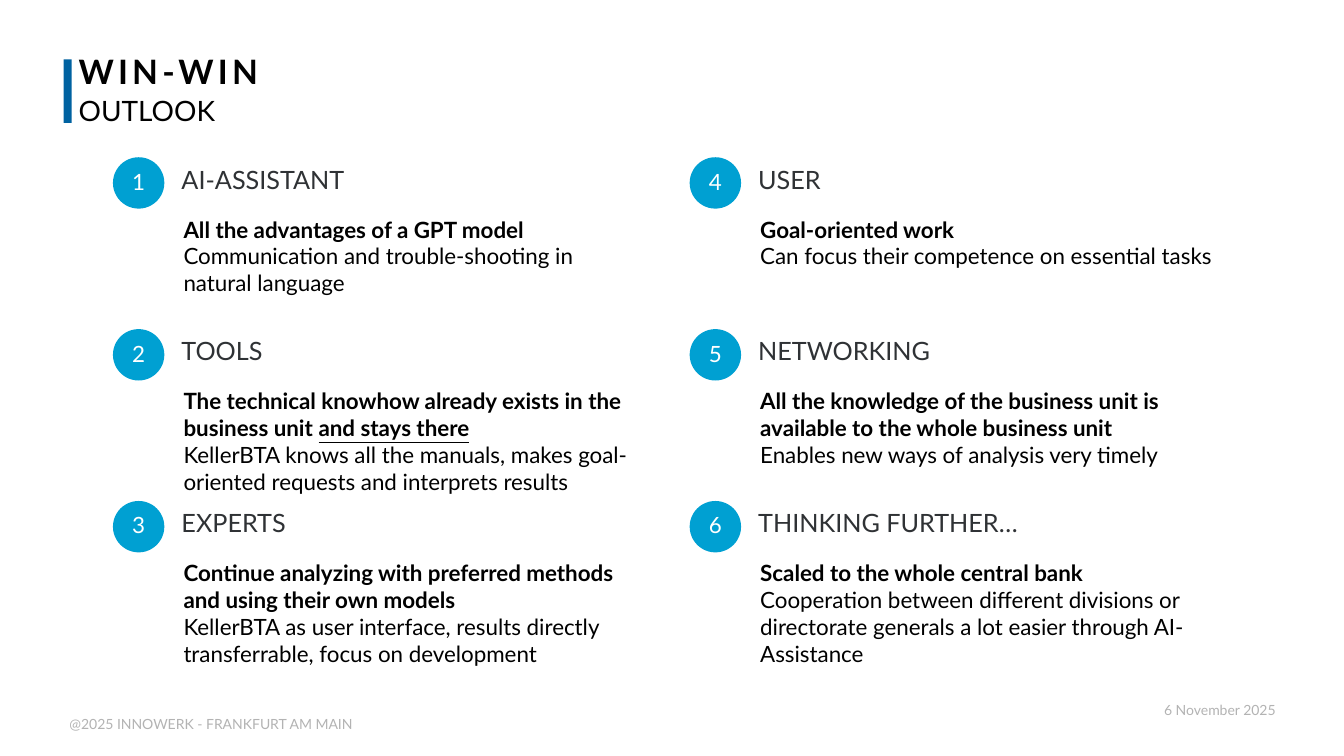
from pptx import Presentation
from pptx.util import Inches, Pt
from pptx.dml.color import RGBColor
from pptx.enum.shapes import MSO_SHAPE as Shape
from pptx.enum.text import PP_ALIGN as Align, MSO_ANCHOR as Anchor

BLACK, GREY, DARK, WHITE = "000000", "B3B3B3", "2F3235", "FFFFFF"
NAVY, CYAN = "0062A1", "00A0D2"

ITEMS = [
    ("AI-ASSISTANT", "All the advantages of a GPT model", "",
     "Communication and trouble-shooting in natural language"),
    ("TOOLS", "The technical knowhow already exists in the business unit ",
     "and stays there",
     "KellerBTA knows all the manuals, makes goal-oriented requests "
     "and interprets results"),
    ("EXPERTS", "Continue analyzing with preferred methods and using their own models", "",
     "KellerBTA as user interface, results directly transferrable, "
     "focus on development"),
    ("USER", "Goal-oriented work", "",
     "Can focus their competence on essential tasks"),
    ("NETWORKING",
     "All the knowledge of the business unit is available to the whole business unit", "",
     "Enables new ways of analysis very timely"),
    ("THINKING FURTHER…", "Scaled to the whole central bank", "",
     "Cooperation between different divisions or directorate generals "
     "a lot easier through AI-Assistance"),
]
ROWS = 3
LEFT, TOP = 1.12, 1.56
COL_STEP, ROW_STEP = 5.72, 1.705
DISC, WIDE = 0.51, 4.65
PAD = (0.03,) * 4


def color(code):
    return RGBColor.from_string(code)


def write(shape, paras, size, tint, pad=(0,) * 4, lead=1.0,
          align=Align.LEFT, anchor=Anchor.TOP):
    frame = shape.text_frame
    sides = zip(("left", "top", "right", "bottom"), pad)
    form = {"margin_" + side: Inches(gap) for side, gap in sides}
    form.update(word_wrap=True, vertical_anchor=anchor)
    for name, value in form.items():
        setattr(frame, name, value)
    for i, runs in enumerate(paras):
        para = frame.add_paragraph() if i else frame.paragraphs[0]
        para.alignment, para.line_spacing = align, lead
        for text, style in runs:
            run = para.add_run()
            run.text = text
            look = {"name": "Lato", "size": Pt(size), **style}
            for name, value in look.items():
                setattr(run.font, name, value)
            run.font.color.rgb = color(tint)


def label(box, paras, *args, **form):
    shape = slide.shapes.add_textbox(*map(Inches, box))
    write(shape, paras, *args, **form)
    return shape


def solid(kind, box, tint):
    shape = slide.shapes.add_shape(kind, *map(Inches, box))
    shape.shadow.inherit = False
    shape.fill.solid()
    shape.fill.fore_color.rgb = color(tint)
    shape.line.fill.background()
    return shape


deck = Presentation()
deck.slide_width, deck.slide_height = Inches(13.33), Inches(7.5)
slide = deck.slides.add_slide(deck.slide_layouts[6])

solid(Shape.RECTANGLE, (0.63, 0.59, 0.08, 0.63), NAVY)
title = label((0.78, 0.54, 11.96, 0.37), [[("WIN-WIN", {"bold": True})]],
              24, BLACK, lead=0.9, anchor=Anchor.BOTTOM)
title.text_frame.paragraphs[0].runs[0]._r.get_or_add_rPr().set("spc", "300")
label((0.78, 0.93, 11.96, 0.34), [[("OUTLOOK", {})]], 20, BLACK)
label((0.59, 7.1, 6.82, 0.18), [[("@2025 INNOWERK - FRANKFURT AM MAIN", {})]],
      10, GREY, pad=(0.1, 0, 0.1, 0))
label((9.66, 6.91, 3.09, 0.18), [[("6 November 2025", {})]],
      10, GREY, pad=(0.1, 0.05, 0.1, 0.05), align=Align.RIGHT)

for i, (head, claim, stress, note) in enumerate(ITEMS):
    col, row = divmod(i, ROWS)
    x, y = LEFT + col * COL_STEP, TOP + row * ROW_STEP
    disc = solid(Shape.OVAL, (x, y, DISC, DISC), CYAN)
    write(disc, [[(str(i + 1), {})]], 16, WHITE, lead=0.9,
          align=Align.CENTER, anchor=Anchor.MIDDLE)
    label((x + 0.65, y + 0.07, WIDE, 0.33), [[(head, {})]], 18, DARK,
          pad=PAD, lead=0.9, anchor=Anchor.MIDDLE)
    lines = [[(claim, {"bold": True})], [(note, {})]]
    if stress:
        lines[0].append((stress, {"bold": True, "underline": True}))
    label((x + 0.67, y + 0.55, WIDE, 1.13), lines, 16, BLACK, pad=PAD)

deck.save("out.pptx")
